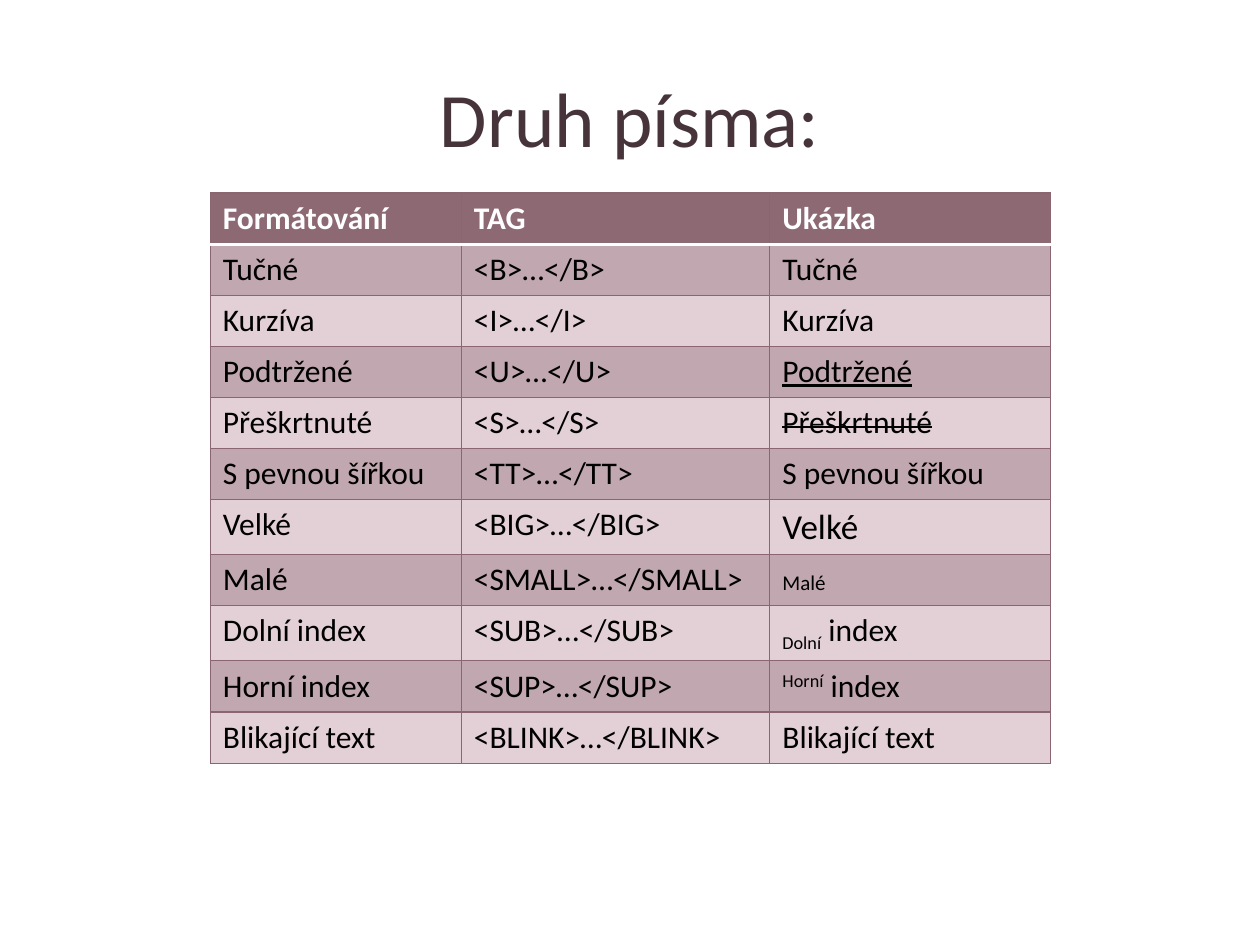
from dataclasses import dataclass

from lxml.etree import SubElement
from pptx import Presentation
from pptx.dml.color import RGBColor
from pptx.enum.text import MSO_ANCHOR, PP_ALIGN
from pptx.oxml.ns import qn
from pptx.slide import Slide
from pptx.table import _Cell
from pptx.text.text import _Paragraph
from pptx.util import Cm, Pt

FONT = "Calibri"
TITLE_COLOR = RGBColor(0x46, 0x34, 0x3A)
HEADER_FILL = RGBColor(0x8D, 0x69, 0x74)
DARK_BAND = RGBColor(0xC1, 0xA7, 0xAF)
LIGHT_BAND = RGBColor(0xE3, 0xD0, 0xD6)
BORDER = RGBColor(0x8B, 0x66, 0x71)
WHITE = RGBColor(0xFF, 0xFF, 0xFF)
BLACK = RGBColor(0x00, 0x00, 0x00)

COLUMN_WIDTHS = (Cm(5.06), Cm(6.22), Cm(5.65))
ROW_HEIGHT = Cm(1.03)


@dataclass(frozen=True)
class TextRun:
    text: str
    size: float = 18
    color: RGBColor = BLACK
    bold: bool = False
    underline: bool = False
    strike: bool = False
    baseline: int = 0


@dataclass(frozen=True)
class FontStyle:
    name: str
    tag: str
    sample: tuple[TextRun, ...]


HEADINGS = ("Formátování", "TAG", "Ukázka")
FONT_STYLES = (
    FontStyle("Tučné", "B", (TextRun("Tučné"),)),
    FontStyle("Kurzíva", "I", (TextRun("Kurzíva"),)),
    FontStyle("Podtržené", "U", (TextRun("Podtržené", underline=True),)),
    FontStyle("Přeškrtnuté", "S", (TextRun("Přeškrtnuté", strike=True),)),
    FontStyle("S pevnou šířkou", "TT", (TextRun("S pevnou šířkou"),)),
    FontStyle("Velké", "BIG", (TextRun("Velké", size=20),)),
    FontStyle("Malé", "SMALL", (TextRun("Malé", size=12), TextRun(" "))),
    FontStyle("Dolní index", "SUB", (TextRun("Dolní", baseline=-25), TextRun(" index"))),
    FontStyle("Horní index", "SUP", (TextRun("Horní", baseline=30), TextRun(" index"))),
    FontStyle("Blikající text", "BLINK", (TextRun("Blikající text"),)),
)


def add_run(paragraph: _Paragraph, text_run: TextRun) -> None:
    """Append one formatted run to a paragraph."""
    run = paragraph.add_run()
    run.text = text_run.text
    run.font.name = FONT
    run.font.size = Pt(text_run.size)
    run.font.bold = text_run.bold
    run.font.underline = text_run.underline
    run.font.color.rgb = text_run.color
    properties = run.font._element
    if text_run.strike:
        properties.set("strike", "sngStrike")
    if text_run.baseline:
        properties.set("baseline", str(text_run.baseline * 1000))


def add_border(cell: _Cell, side: str, color: RGBColor, width: float) -> None:
    """Draw one side of a cell border."""
    properties = cell._tc.get_or_add_tcPr()
    line = SubElement(properties, qn(f"a:ln{side}"), w=str(Pt(width)))
    fill = SubElement(line, qn("a:solidFill"))
    SubElement(fill, qn("a:srgbClr"), val=str(color))


def fill_cell(cell: _Cell, runs: tuple[TextRun, ...], row: int) -> None:
    """Write a cell's text, borders and band colour."""
    for text_run in runs:
        add_run(cell.text_frame.paragraphs[0], text_run)
    header_edge = {0: "B", 1: "T"}.get(row)
    for side in "LRTB":
        if side == header_edge:
            add_border(cell, side, WHITE, 2)
        else:
            add_border(cell, side, BORDER, 0.75)
    cell.fill.solid()
    band = DARK_BAND if row % 2 else LIGHT_BAND
    cell.fill.fore_color.rgb = band if row else HEADER_FILL


def add_title(slide: Slide, text: str) -> None:
    """Add the centred slide title."""
    shape = slide.shapes.add_textbox(Cm(1.27), Cm(0.76), Cm(22.86), Cm(3.18))
    frame = shape.text_frame
    frame.word_wrap = True
    frame.vertical_anchor = MSO_ANCHOR.MIDDLE
    paragraph = frame.paragraphs[0]
    paragraph.alignment = PP_ALIGN.CENTER
    add_run(paragraph, TextRun(text, size=44, color=TITLE_COLOR))


def add_style_table(slide: Slide) -> None:
    """Add the table of font styles, their tags and samples."""
    rows = [tuple((TextRun(text, color=WHITE, bold=True),) for text in HEADINGS)]
    for style in FONT_STYLES:
        tag = f"<{style.tag}>…</{style.tag}>"
        rows.append(((TextRun(style.name),), (TextRun(tag),), style.sample))
    table = slide.shapes.add_table(
        len(rows), len(HEADINGS), Cm(4.24), Cm(3.89),
        sum(COLUMN_WIDTHS), ROW_HEIGHT * len(rows),
    ).table
    table.first_row = False
    table.horz_banding = False
    for column, width in zip(table.columns, COLUMN_WIDTHS):
        column.width = width
    for row_index, row in enumerate(rows):
        table.rows[row_index].height = ROW_HEIGHT
        for column_index, runs in enumerate(row):
            fill_cell(table.cell(row_index, column_index), runs, row_index)


def main() -> None:
    """Build and save the presentation."""
    presentation = Presentation()
    presentation.slide_width = Cm(25.4)
    presentation.slide_height = Cm(19.05)
    slide = presentation.slides.add_slide(presentation.slide_layouts[6])
    add_title(slide, "Druh písma:")
    add_style_table(slide)
    presentation.save("out.pptx")


if __name__ == "__main__":
    main()
